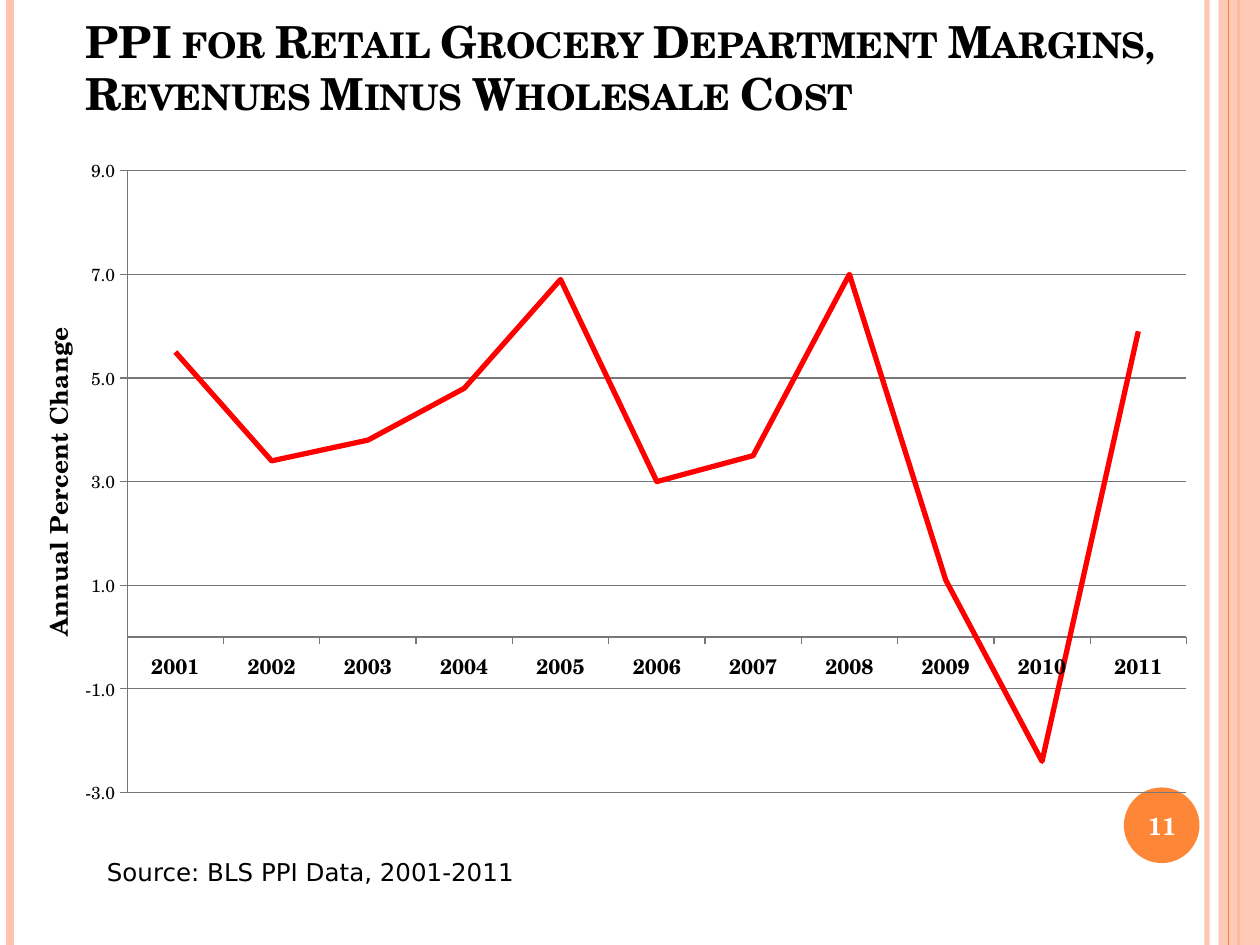
from dataclasses import dataclass

import pptx
import pptx.chart.data
import pptx.dml.color
import pptx.enum.chart
import pptx.enum.shapes
import pptx.enum.text
import pptx.oxml
import pptx.oxml.ns
import pptx.util
from lxml import etree

EMU_PER_PX = 9144
SLIDE_WIDTH, SLIDE_HEIGHT = 1000, 750
SERIF, SANS = "TeX Gyre Schola", "DejaVu Sans"
BLACK, WHITE, ORANGE, PEACH, RED, GREY = "000000", "FFFFFF", "FE8637", "FEC3AE", "FF0000", "777777"
YEARS = [str(year) for year in range(2001, 2012)]
CHANGES = [5.5, 3.4, 3.8, 4.8, 6.9, 3.0, 3.5, 7.0, 1.1, -2.4, 5.9]
PLOT_AREA = {"x": 0.08, "y": 0.02, "w": 0.885, "h": 0.94}


@dataclass(frozen=True)
class Stripe:
    left: int
    weight: float
    color: str
    opacity: int = 100


@dataclass(frozen=True)
class Panel:
    left: int
    top: int
    width: int
    height: int
    preset: pptx.enum.shapes.MSO_SHAPE
    color: str
    opacity: int = 100


@dataclass(frozen=True)
class Label:
    text: str
    left: int
    top: int
    width: int
    height: int
    size: float
    font: str
    color: str = BLACK
    bold: bool = False
    small_caps: bool = False
    anchor: pptx.enum.text.MSO_ANCHOR = pptx.enum.text.MSO_ANCHOR.TOP
    alignment: pptx.enum.text.PP_ALIGN = pptx.enum.text.PP_ALIGN.LEFT


DECORATIONS = (
    Stripe(958, 3, PEACH, 93),
    Stripe(8, 4.5, PEACH),
    Stripe(983, 1.5, ORANGE),
    Panel(967, 0, 33, SLIDE_HEIGHT, pptx.enum.shapes.MSO_SHAPE.RECTANGLE, PEACH, 87),
    Stripe(975, 0.75, ORANGE),
    Panel(892, 625, 60, 60, pptx.enum.shapes.MSO_SHAPE.OVAL, ORANGE),
)
TITLE = Label("PPI for Retail Grocery Department Margins, Revenues Minus Wholesale Cost",
              58, 42, 900, 58, 25.2, SERIF, bold=True, small_caps=True,
              anchor=pptx.enum.text.MSO_ANCHOR.BOTTOM)
SOURCE = Label("Source: BLS PPI Data, 2001-2011", 75, 675, 525, 34, 14, SANS)
PAGE_NUMBER = Label("11", 889, 627, 67, 57, 14, SERIF, WHITE, bold=True,
                    anchor=pptx.enum.text.MSO_ANCHOR.MIDDLE,
                    alignment=pptx.enum.text.PP_ALIGN.CENTER)


def px(length: int) -> pptx.util.Emu:
    """Turn a length in px into EMU."""
    return pptx.util.Emu(length * EMU_PER_PX)


def rgb(color: str) -> pptx.dml.color.RGBColor:
    """Turn a hex string into a colour."""
    return pptx.dml.color.RGBColor.from_string(color)


def set_opacity(shape, opacity: int) -> None:
    """Make the colour of a shape partly transparent."""
    if opacity < 100:
        color = shape._element.spPr.find(".//" + pptx.oxml.ns.qn("a:srgbClr"))
        etree.SubElement(color, pptx.oxml.ns.qn("a:alpha"), val=str(opacity * 1000))


def set_font(font, name: str, size: float, color: str, bold: bool) -> None:
    """Format a font."""
    font.name = name
    font.size = pptx.util.Pt(size)
    font.bold = bold
    font.color.rgb = rgb(color)


def set_line(line, weight: float, color: str) -> None:
    """Format a line."""
    line.width = pptx.util.Pt(weight)
    line.color.rgb = rgb(color)


def draw_stripe(slide, stripe: Stripe) -> None:
    """Draw a vertical line over the full slide height."""
    connector = slide.shapes.add_connector(
        pptx.enum.shapes.MSO_CONNECTOR.STRAIGHT,
        px(stripe.left), px(0), px(stripe.left), px(SLIDE_HEIGHT))
    set_line(connector.line, stripe.weight, stripe.color)
    set_opacity(connector, stripe.opacity)
    etree.SubElement(connector._element.spPr, pptx.oxml.ns.qn("a:effectLst"))


def draw_panel(slide, panel: Panel) -> None:
    """Draw a filled shape without an outline."""
    shape = slide.shapes.add_shape(
        panel.preset, px(panel.left), px(panel.top), px(panel.width), px(panel.height))
    shape.shadow.inherit = False
    shape.fill.solid()
    shape.fill.fore_color.rgb = rgb(panel.color)
    shape.line.fill.background()
    set_opacity(shape, panel.opacity)


def draw_label(slide, label: Label) -> None:
    """Draw a text box."""
    shape = slide.shapes.add_textbox(
        px(label.left), px(label.top), px(label.width), px(label.height))
    text_frame = shape.text_frame
    text_frame.word_wrap = True
    text_frame.vertical_anchor = label.anchor
    text_frame.text = label.text
    paragraph = text_frame.paragraphs[0]
    paragraph.alignment = label.alignment
    font = paragraph.runs[0].font
    set_font(font, label.font, label.size, label.color, label.bold)
    if label.small_caps:
        font._element.set("cap", "small")


def set_plot_layout(chart) -> None:
    """Fix the inner plot area as fractions of the chart."""
    plot_area = chart._chartSpace.chart.plotArea
    for old_layout in plot_area.findall(pptx.oxml.ns.qn("c:layout")):
        plot_area.remove(old_layout)
    layout = etree.Element(pptx.oxml.ns.qn("c:layout"))
    manual = etree.SubElement(layout, pptx.oxml.ns.qn("c:manualLayout"))
    settings = {"layoutTarget": "inner", "xMode": "edge", "yMode": "edge", **PLOT_AREA}
    for name, value in settings.items():
        etree.SubElement(manual, pptx.oxml.ns.qn(f"c:{name}"), val=str(value))
    plot_area.insert(0, layout)


def draw_chart(slide) -> None:
    """Draw the line chart of annual changes."""
    data = pptx.chart.data.CategoryChartData(number_format="#0.0")
    data.categories = YEARS
    data.add_series("Series 1", CHANGES)
    chart = slide.shapes.add_chart(
        pptx.enum.chart.XL_CHART_TYPE.LINE, px(25), px(125), px(950), px(525), data).chart
    chart.has_legend = False
    chart.has_title = False
    set_font(chart.font, SERIF, 10, BLACK, False)
    set_plot_layout(chart)

    series = chart.plots[0].series[0]
    series.smooth = False
    set_line(series.format.line, 3, RED)

    category_axis, value_axis = chart.category_axis, chart.value_axis
    for axis, size, bold in ((category_axis, 12, True), (value_axis, 10, False)):
        axis.major_tick_mark = pptx.enum.chart.XL_TICK_MARK.OUTSIDE
        set_line(axis.format.line, 0.75, GREY)
        set_font(axis.tick_labels.font, SERIF, size, BLACK, bold)
    value_axis.minimum_scale, value_axis.maximum_scale, value_axis.major_unit = -3, 9, 2
    value_axis.tick_labels.number_format = "#0.0"
    value_axis.tick_labels.number_format_is_linked = False
    set_line(value_axis.major_gridlines.format.line, 0.75, GREY)
    title_frame = value_axis.axis_title.text_frame
    title_frame.text = "Annual Percent Change"
    set_font(title_frame.paragraphs[0].runs[0].font, SERIF, 14, BLACK, True)


def main() -> None:
    """Build the slide and save it."""
    presentation = pptx.Presentation()
    presentation.slide_width, presentation.slide_height = px(SLIDE_WIDTH), px(SLIDE_HEIGHT)
    slide = presentation.slides.add_slide(presentation.slide_layouts[6])
    for decoration in DECORATIONS:
        draw = draw_stripe if isinstance(decoration, Stripe) else draw_panel
        draw(slide, decoration)
    draw_label(slide, TITLE)
    draw_chart(slide)
    for label in (SOURCE, PAGE_NUMBER):
        draw_label(slide, label)
    presentation.save("out.pptx")


if __name__ == "__main__":
    main()
